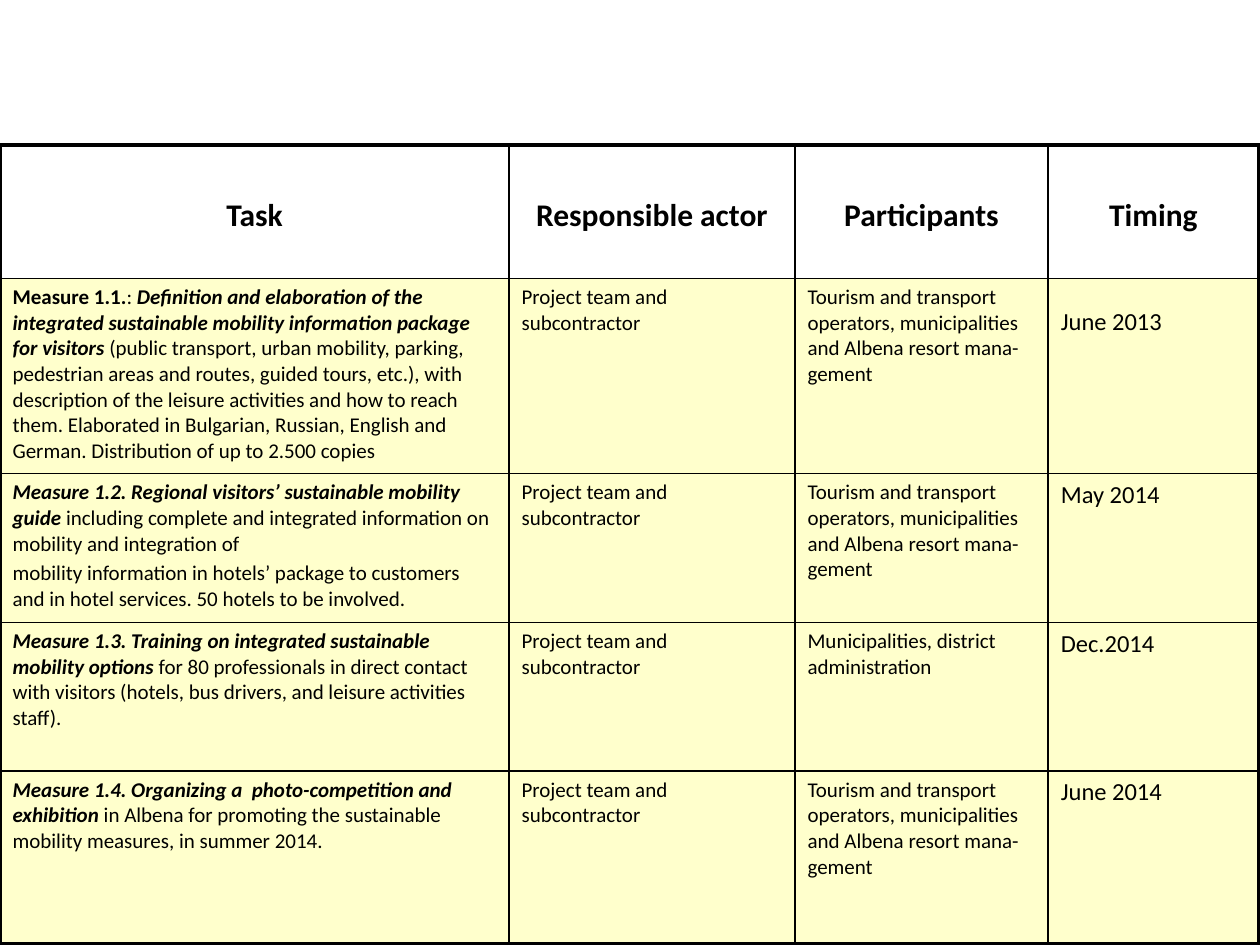
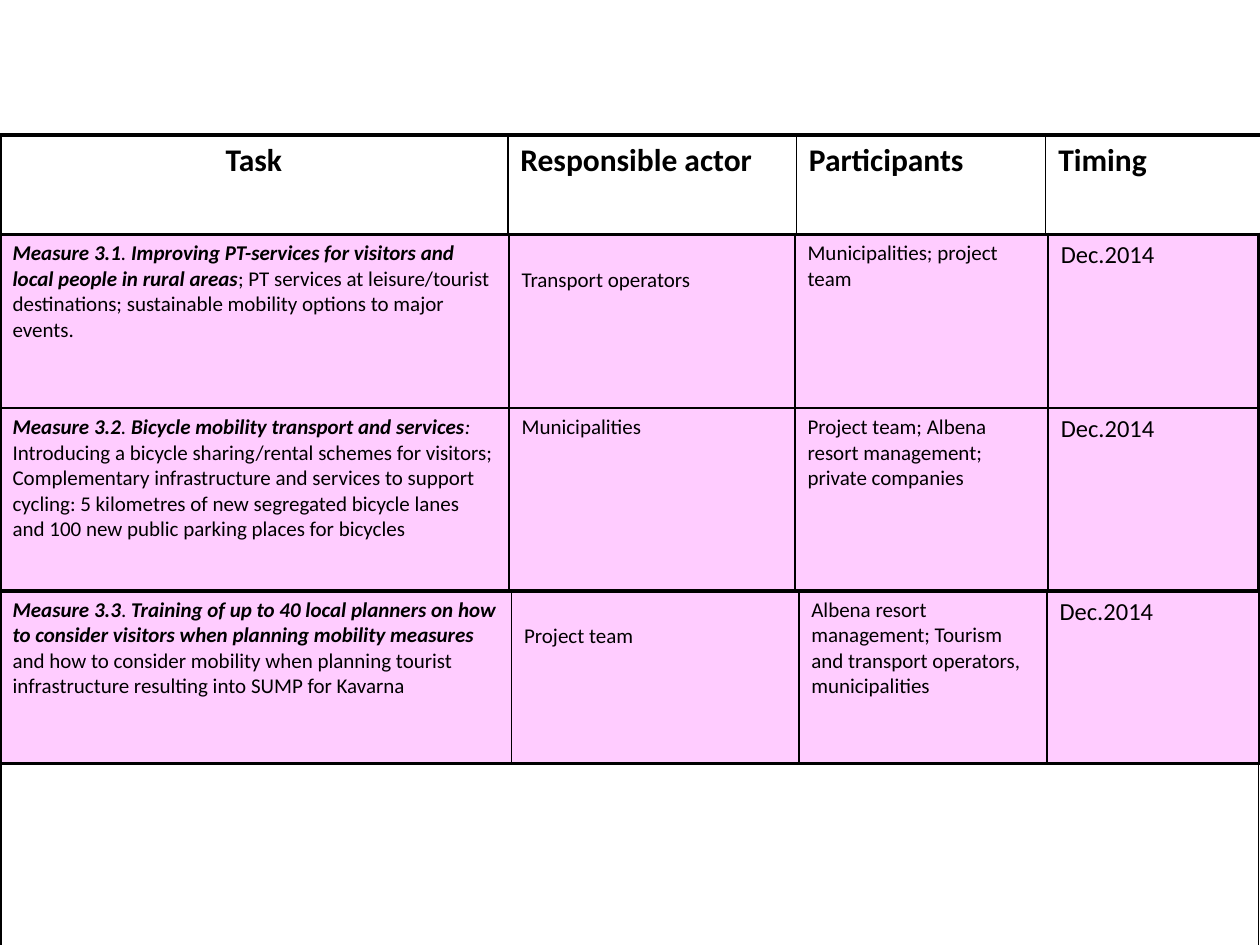
from lxml import etree
from pptx import Presentation
from pptx.dml.color import RGBColor
from pptx.enum import text
from pptx.oxml import ns
from pptx.util import Inches, Pt

HUES = {"ink": "000000", "head": "FFFFFF", "info": "FFFFCC", "plan": "FFCCFF"}
FONT = "Calibri"
HEAD, BODY, DATE = 18, 12, 14
THICK, THIN = 2.25, 1
COLS = [4.04, 2.27, 2.01, 1.67]
TITLES = ["Task", "Responsible actor", "Participants", "Timing"]

TEAM = "Project team and subcontractor"
TOUR = ("Tourism and transport operators, municipalities "
        "and Albena resort mana-gement")

# A task is a list of paragraphs, each a list of (words, style) runs
INFO = [
    ([[("Measure 1.1.", "b"), (": ", ""),
       ("Definition and elaboration of the integrated sustainable mobility "
        "information package for visitors ", "bi"),
       ("(public transport, urban mobility, parking, pedestrian areas and "
        "routes, guided tours, etc.), with description of the leisure "
        "activities and how to reach them. Elaborated in Bulgarian, Russian, "
        "English and German. Distribution of up to 2.500 copies", "")]],
     TEAM, TOUR, "June 2013"),
    ([[("Measure 1.2. Regional visitors’ sustainable mobility guide ", "bi"),
       ("including complete and integrated information on mobility and "
        "integration of", "")],
      [("mobility information in hotels’ package to customers and in hotel "
        "services. 50 hotels to be involved.", "")]],
     TEAM, TOUR, "May 2014"),
    ([[("Measure 1.3. Training on integrated sustainable mobility options",
        "bi"),
       (" for 80 professionals in direct contact with visitors (hotels, bus "
        "drivers, and leisure activities staff).", "")]],
     TEAM, "Municipalities, district administration", "Dec.2014"),
    ([[("Measure 1.4. Organizing a  photo-competition and exhibition", "bi"),
       (" in Albena for promoting the sustainable mobility measures, in "
        "summer 2014.", "")]],
     TEAM, TOUR, "June 2014"),
]

PLAN = [
    ([[("Measure 3.1", "bi"), (". ", "i"),
       ("Improving PT-services for visitors and local people in rural areas",
        "bi"),
       ("; PT services at leisure/tourist destinations; sustainable mobility "
        "options to major events.", "")]],
     "Transport operators", "Municipalities; project team", "Dec.2014"),
    ([[("Measure 3.2", "bi"), (". ", "i"),
       ("Bicycle mobility transport and services", "bi"), (":", "i"),
       (" Introducing a bicycle sharing/rental schemes for visitors; "
        "Complementary infrastructure and services to support cycling: 5 "
        "kilometres of new segregated bicycle lanes and 100 new public "
        "parking places for bicycles", "")]],
     "Municipalities",
     "Project team; Albena resort management; private companies", "Dec.2014"),
]

TRAIN = (
    [[("Measure 3.3", "bi"), (". ", ""),
      ("Training of up to 40 local planners on how to consider visitors when "
       "planning mobility measures ", "bi"),
      ("and how to consider mobility when planning tourist infrastructure "
       "resulting into SUMP for Kavarna", "")]],
    "Project team",
    "Albena resort management; Tourism and transport operators, "
    "municipalities", "Dec.2014")


def paint(cell, hue):
    if hue:
        cell.fill.solid()
        cell.fill.fore_color.rgb = RGBColor.from_string(HUES[hue])
    else:
        cell.fill.background()


def edge(cell, side, width):
    """Draw one border of a cell; call before the fill is set."""
    line = etree.SubElement(cell._tc.get_or_add_tcPr(),
                            ns.qn(f"a:ln{side}"), w=str(Pt(width)))
    fill = etree.SubElement(line, ns.qn("a:solidFill"))
    etree.SubElement(fill, ns.qn("a:srgbClr"), val=HUES["ink"])


def grid(slide, box, cols, rows):
    """Add a bare table: thick frame, thin inner lines."""
    left, top = box
    size = len(rows), len(cols)
    table = slide.shapes.add_table(
        *size, Inches(left), Inches(top),
        Inches(sum(cols)), Inches(sum(rows))).table
    table.first_row = table.horz_banding = False
    for col, width in zip(table.columns, cols):
        col.width = Inches(width)
    for row, high in zip(table.rows, rows):
        row.height = Inches(high)
    for r in range(size[0]):
        for c in range(size[1]):
            outer = {"L": c == 0, "R": c == size[1] - 1,
                     "T": r == 0, "B": r == size[0] - 1}
            for side, rim in outer.items():
                edge(table.cell(r, c), side, THICK if rim else THIN)
            paint(table.cell(r, c), None)
    return table


def write(cell, words, size, bold=False):
    """Fill a cell from a string or a list of paragraphs of runs."""
    paras = [[(words, "b" if bold else "")]] if isinstance(words, str) else words
    frame = cell.text_frame
    for n, runs in enumerate(paras):
        para = frame.add_paragraph() if n else frame.paragraphs[0]
        if n:
            para.space_before = Pt(size * 0.2)
        for part, style in runs:
            run = para.add_run()
            run.text = part
            font = run.font
            font.name, font.size = FONT, Pt(size)
            font.bold, font.italic = "b" in style, "i" in style
            font.color.rgb = RGBColor.from_string(HUES["ink"])


def header(table, hue=None):
    for c, title in enumerate(TITLES):
        cell = table.cell(0, c)
        write(cell, title, HEAD, bold=True)
        paint(cell, hue)
        if c == 0:
            cell.text_frame.paragraphs[0].alignment = text.PP_ALIGN.CENTER


def measure(table, r, parts, hue):
    for c, words in enumerate(parts):
        cell = table.cell(r, c)
        write(cell, words, DATE if c == 3 else BODY)
        paint(cell, hue)


def lower(cell, drop):
    """Push the text of a cell down from its top."""
    cell.margin_top = Inches(0.05 + drop)


def info_slide(slide, box):
    table = grid(slide, box, COLS, [1.06, 1.55, 1.18, 1.18, 1.37])
    header(table, "head")
    for c in range(len(COLS)):
        cell = table.cell(0, c)
        cell.text_frame.paragraphs[0].alignment = text.PP_ALIGN.CENTER
        cell.vertical_anchor = text.MSO_ANCHOR.MIDDLE
        cell.margin_top = Inches(0.12)
    for r, parts in enumerate(INFO, 1):
        measure(table, r, parts, "info")
    lower(table.cell(1, 3), 0.18)


def plan_slide(slide, box):
    left, top = box
    high, rows = 0.79, [1.38, 1.45, 3.08]

    # Measures, with one open row across the foot
    main = grid(slide, (left, top + high), COLS, rows)
    for r, parts in enumerate(PLAN):
        measure(main, r, parts, "plan")
    lower(main.cell(0, 1), 0.21)
    foot = main.cell(2, 0)
    foot.merge(main.cell(2, 3))

    # Training measure laid over the open row
    train = grid(slide, (left, top + high + sum(rows[:2])),
                 [4.06, 2.28, 1.97, 1.69], [1.37])
    measure(train, 0, TRAIN, "plan")
    lower(train.cell(0, 1), 0.21)

    # Header strip
    header(grid(slide, box, [4.03, 2.29, 1.98, 1.74], [high]))


def main():
    deck = Presentation()
    deck.slide_width, deck.slide_height = Inches(10), Inches(7.5)
    for build, box in ((info_slide, (0, 1.15)), (plan_slide, (0, 1.07))):
        build(deck.slides.add_slide(deck.slide_layouts[6]), box)
    deck.save("out.pptx")


if __name__ == "__main__":
    main()
